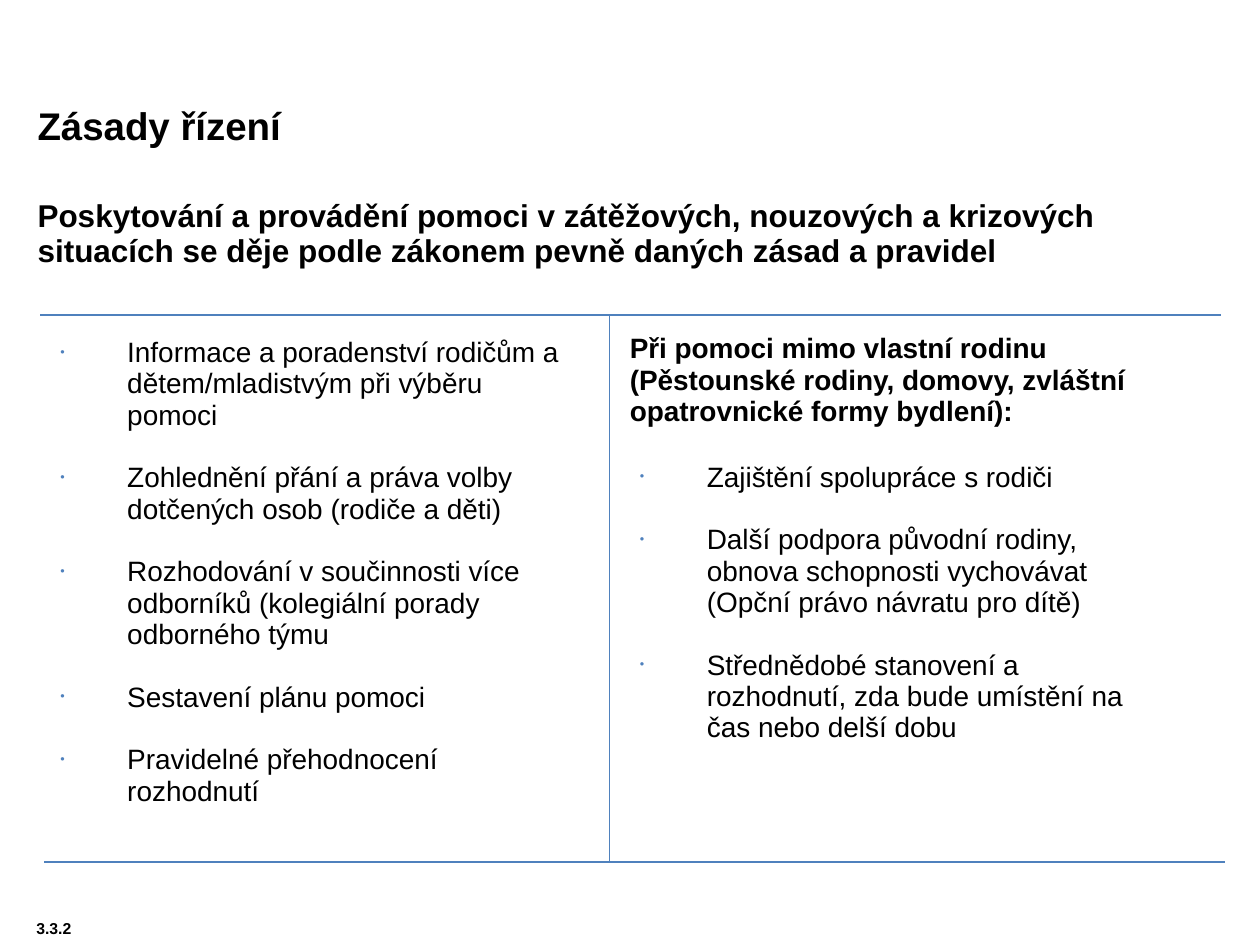
from lxml import etree
from pptx import Presentation
from pptx import util as u
from pptx.dml.color import RGBColor
from pptx.enum import shapes, text
from pptx.oxml import ns

BLACK = "000000"
BLUE = "4F81BD"

DUTIES = [
    "Informace a poradenství rodičům a dětem/mladistvým při výběru pomoci",
    "Zohlednění přání a práva volby dotčených osob (rodiče a děti)",
    "Rozhodování v součinnosti více odborníků (kolegiální porady odborného týmu",
    "Sestavení plánu pomoci",
    "Pravidelné přehodnocení rozhodnutí",
]
CARE = [
    "Zajištění spolupráce s rodiči",
    "Další podpora původní rodiny, obnova schopnosti vychovávat (Opční právo návratu pro dítě)",
    "Střednědobé stanovení a rozhodnutí, zda bude umístění na čas nebo delší dobu",
]


def color(code):
    return RGBColor.from_string(code)


def add(parent, tag, **attrs):
    node = etree.SubElement(parent, ns.qn(tag))
    for key, value in attrs.items():
        node.set(key, value)
    return node


def bullet(par):
    props = par._p.get_or_add_pPr()
    props.set("marL", str(u.Pt(38.2)))
    props.set("indent", str(-u.Pt(38.2)))
    add(add(props, "a:buClr"), "a:srgbClr", val=BLUE)
    add(props, "a:buSzPct", val="45000")
    add(props, "a:buFont", typeface="Arial")
    add(props, "a:buChar", char="•")


def write(slide, words, box, size=16, bold=False, wrap=True, middle=False,
          bullets=False, pitch=0.93, gap=0):
    frame = slide.shapes.add_textbox(*map(u.Pt, box)).text_frame
    frame.word_wrap = wrap
    frame.auto_size = text.MSO_AUTO_SIZE.SHAPE_TO_FIT_TEXT
    anchor = text.MSO_ANCHOR
    frame.vertical_anchor = anchor.MIDDLE if middle else anchor.TOP
    lines = [words] if isinstance(words, str) else words
    for i, line in enumerate(lines):
        par = frame.paragraphs[0] if i == 0 else frame.add_paragraph()
        par.line_spacing = pitch
        if gap and i < len(lines) - 1:
            par.space_after = u.Pt(gap)
        if bullets:
            bullet(par)
        run = par.add_run()
        run.text = line
        font = run.font
        font.name = "Arial"
        font.size = u.Pt(size)
        font.bold = bold
        font.color.rgb = color(BLACK)


def rule(slide, start, end, width):
    line = slide.shapes.add_connector(
        shapes.MSO_CONNECTOR.STRAIGHT, *map(u.Pt, start + end))
    line.line.color.rgb = color(BLUE)
    line.line.width = u.Pt(width)
    add(line._element.spPr, "a:effectLst")


def main():
    deck = Presentation()
    deck.slide_width, deck.slide_height = u.Pt(720), u.Pt(540)
    slide = deck.slides.add_slide(deck.slide_layouts[6])

    write(slide, "3.3.2", (13.7, 521.3, 34.6, 18), size=9, bold=True,
          wrap=False, middle=True, pitch=1)
    write(slide, "Zásady řízení", (14.4, 56.9, 681, 31.7), size=22,
          bold=True, middle=True)
    write(slide, "Poskytování a provádění pomoci v zátěžových, nouzových a "
          "krizových situacích se děje podle zákonem pevně daných zásad a "
          "pravidel", (14.4, 110.2, 667.4, 47.5), size=18, bold=True,
          middle=True)

    top, foot, mid = 180, 492.8, 348.1
    rule(slide, (25.2, foot), (699.8, foot), 1.25)
    rule(slide, (23, top), (697.7, top), 1.25)
    rule(slide, (mid, foot), (mid, top), 0.75)

    write(slide, DUTIES, (27.4, 189.4, 308.9, 277.9), bullets=True, gap=18)
    write(slide, "Při pomoci mimo vlastní rodinu (Pěstounské rodiny, domovy, "
          "zvláštní opatrovnické formy bydlení):",
          (352.8, 187.2, 343.4, 60.5), bold=True)
    write(slide, CARE, (358.6, 260.6, 308.9, 169.2), bullets=True, gap=18)

    deck.save("out.pptx")


if __name__ == "__main__":
    main()
